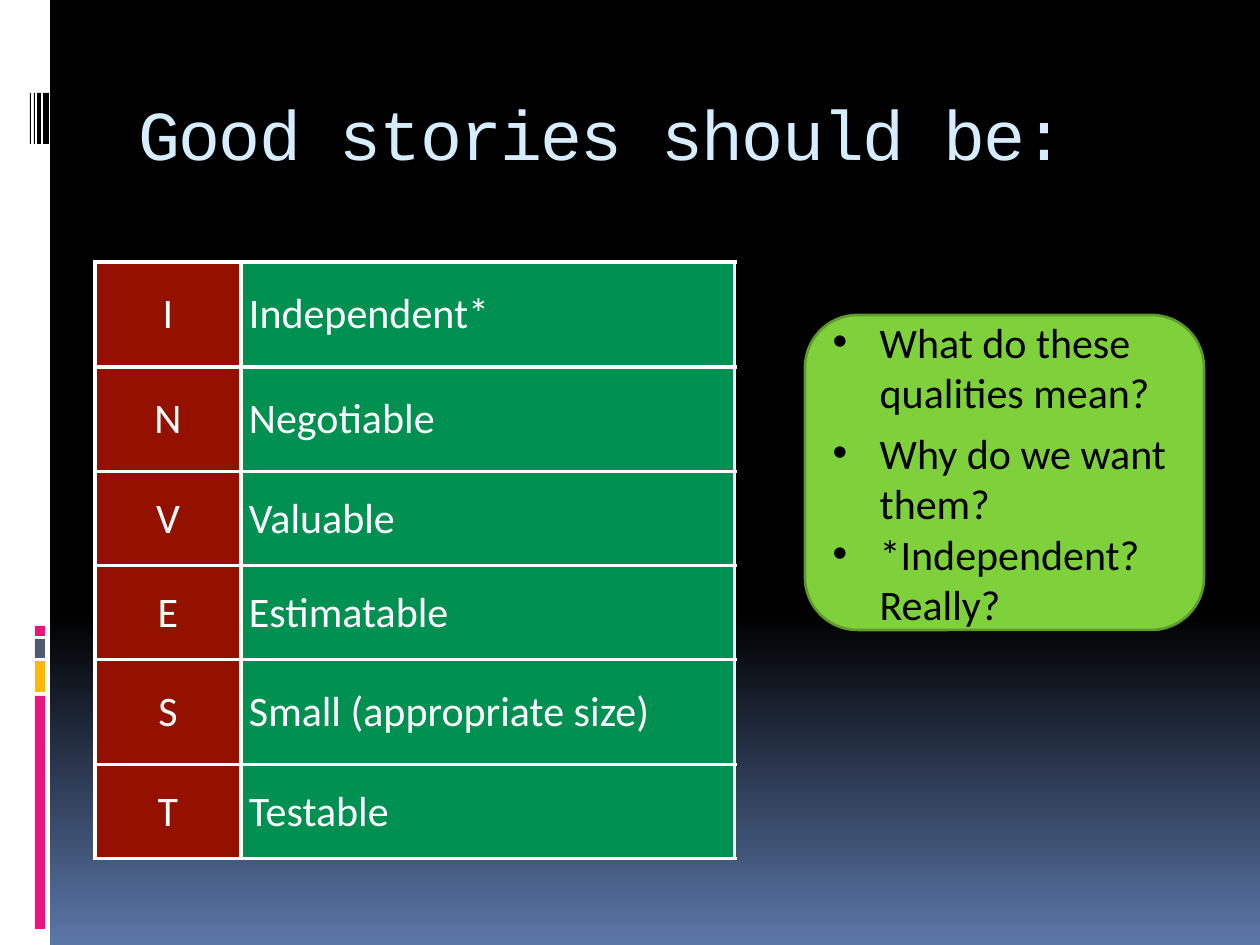
from pptx import Presentation
from pptx.dml.color import RGBColor
from pptx.enum.shapes import MSO_SHAPE
from pptx.enum.text import MSO_ANCHOR, PP_ALIGN
from pptx.oxml.ns import qn
from pptx.util import Emu, Pt
from lxml.etree import SubElement

PX = 914400 / 126
BLACK = RGBColor(0x00, 0x00, 0x00)
WHITE = RGBColor(0xFF, 0xFF, 0xFF)
STEEL = RGBColor(0x5B, 0x77, 0xA8)
PINK = RGBColor(0xEA, 0x15, 0x7A)
AMBER = RGBColor(0xFE, 0xB8, 0x0A)
SLATE = RGBColor(0x4E, 0x5B, 0x6F)
PALE_BLUE = RGBColor(0xD6, 0xEC, 0xFF)
DARK_RED = RGBColor(0x94, 0x11, 0x00)
GREEN = RGBColor(0x00, 0x90, 0x51)
LIME = RGBColor(0x7F, 0xD1, 0x3B)
DARK_LIME = RGBColor(0x5E, 0x9B, 0x2C)

QUALITIES = [
    ("I", "Independent*", 105),
    ("N", "Negotiable", 105),
    ("V", "Valuable", 94),
    ("E", "Estimatable", 94),
    ("S", "Small (appropriate size)", 105),
    ("T", "Testable", 94),
]
QUESTIONS = [
    ("What do these qualities mean?", 6),
    ("Why do we want them?", 0),
    ("*Independent? Really?", 0),
]


def px(length):
    return Emu(round(length * PX))


def add_block(page, kind, box, color):
    block = page.shapes.add_shape(kind, *map(px, box))
    block.shadow.inherit = False
    block.fill.solid()
    block.fill.fore_color.rgb = color
    block.line.fill.background()
    return block


def add_span(para, text, font, size, color):
    span = para.add_run()
    span.text = text
    span.font.name = font
    span.font.size = Pt(size)
    span.font.color.rgb = color
    return span


def paint_background(page):
    fill = page.background.fill
    fill.gradient()
    fill.gradient_angle = 270
    for stop, position, color in zip(fill.gradient_stops, (0.65, 1), (BLACK, STEEL)):
        stop.position = position
        stop.color.rgb = color


def add_sidebar(page, box):
    left, top, width, height = box
    add_block(page, MSO_SHAPE.RECTANGLE, box, WHITE)
    for offset, length, color in ((696, 233, PINK), (661, 31, AMBER),
                                  (639, 19, SLATE), (626, 10, PINK)):
        add_block(page, MSO_SHAPE.RECTANGLE,
                  (left + 35, top + offset, 10, length), color)
    for offset, thickness in ((43, 6), (37, 4), (34, 1), (30, 1)):
        add_block(page, MSO_SHAPE.RECTANGLE,
                  (left + offset, top + 93, thickness, 51), BLACK)


def add_title(page, box):
    frame = page.shapes.add_textbox(*map(px, box)).text_frame
    frame.word_wrap = True
    frame.vertical_anchor = MSO_ANCHOR.MIDDLE
    span = add_span(frame.paragraphs[0], "Good stories should be:",
                    "Courier New", 40, PALE_BLUE)
    span.font._element.set("spc", "-100")


def add_borders(cell):
    properties = cell._tc.get_or_add_tcPr()
    for index, side in enumerate(("a:lnL", "a:lnR", "a:lnT", "a:lnB")):
        line = properties.makeelement(qn(side), {"w": str(Pt(2))})
        properties.insert(index, line)
        solid = SubElement(line, qn("a:solidFill"))
        SubElement(solid, qn("a:srgbClr"), val=str(WHITE))


def add_qualities(page, box):
    table = page.shapes.add_table(len(QUALITIES), 2, *map(px, box)).table
    table.first_row = False
    table.horz_banding = False
    letter_width = 146
    table.columns[0].width = px(letter_width)
    table.columns[1].width = px(box[2] - letter_width)
    styles = ((DARK_RED, PP_ALIGN.CENTER), (GREEN, PP_ALIGN.LEFT))
    for row, (letter, quality, height) in zip(table.rows, QUALITIES):
        row.height = px(height)
        for cell, text, (color, alignment) in zip(row.cells, (letter, quality), styles):
            cell.fill.solid()
            cell.fill.fore_color.rgb = color
            cell.vertical_anchor = MSO_ANCHOR.MIDDLE
            cell.margin_left = cell.margin_right = px(8)
            cell.margin_top = cell.margin_bottom = px(8)
            para = cell.text_frame.paragraphs[0]
            para.alignment = alignment
            add_span(para, text, "Calibri", 24, WHITE)
            add_borders(cell)


def add_questions(page, box):
    panel = add_block(page, MSO_SHAPE.ROUNDED_RECTANGLE, box, LIME)
    panel.line.color.rgb = DARK_LIME
    panel.line.width = Pt(1.5)
    frame = panel.text_frame
    frame.word_wrap = True
    frame.vertical_anchor = MSO_ANCHOR.MIDDLE
    for index, (question, gap) in enumerate(QUESTIONS):
        para = frame.add_paragraph() if index else frame.paragraphs[0]
        para.alignment = PP_ALIGN.LEFT
        para.space_after = Pt(gap)
        properties = para._p.get_or_add_pPr()
        properties.set("marL", str(px(47)))
        properties.set("indent", str(-px(47)))
        SubElement(properties, qn("a:buFont"), typeface="Arial")
        SubElement(properties, qn("a:buChar"), char="•")
        add_span(para, question, "Calibri", 24, BLACK)


def main():
    deck = Presentation()
    deck.slide_width = px(1260)
    deck.slide_height = px(945)
    page = deck.slides.add_slide(deck.slide_layouts[6])
    paint_background(page)
    add_sidebar(page, (0, 0, 50, 945))
    add_title(page, (126, 70, 1071, 126))
    add_qualities(page, (95, 262, 640, 597))
    add_questions(page, (805, 315, 399, 315))
    deck.save("out.pptx")


if __name__ == "__main__":
    main()
